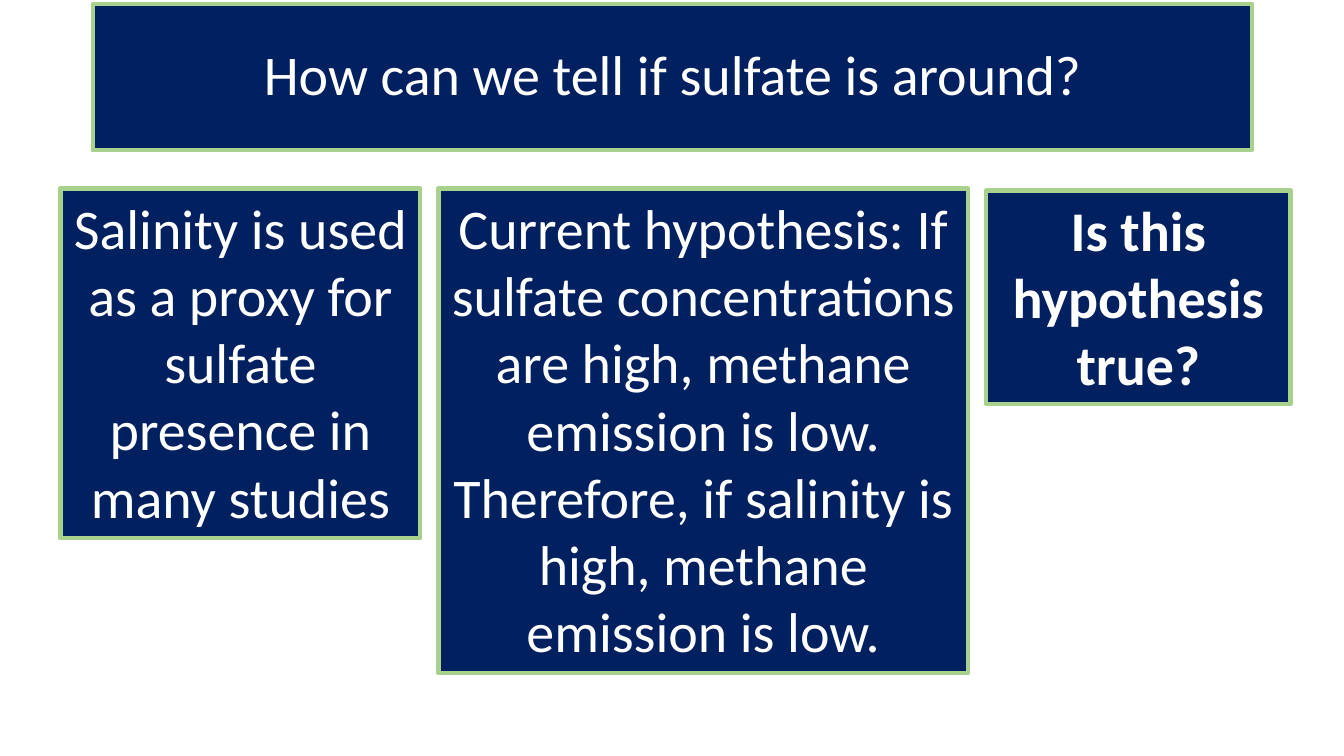
from pptx import Presentation
from pptx.dml.color import RGBColor
from pptx.enum.text import MSO_ANCHOR, MSO_AUTO_SIZE, PP_ALIGN
from pptx.util import Inches, Pt

COLORS = {"navy": "002060", "green": "A9D18E", "white": "FFFFFF"}


def color(name):
    return RGBColor.from_string(COLORS[name])


def write(frame, text, size=40, bold=False, space=1.0, anchor=MSO_ANCHOR.TOP):
    """Fill a frame with centred text, one paragraph per line."""
    frame.word_wrap = True
    frame.vertical_anchor = anchor
    frame.text = text
    for para in frame.paragraphs:
        para.alignment = PP_ALIGN.CENTER
        para.line_spacing = space
        font = para.font
        font.name = "Calibri"
        font.size = Pt(size)
        font.bold = bold
        font.color.rgb = color("white")


def paint(shape):
    """Give a shape the navy fill and green border."""
    shape.fill.solid()
    shape.fill.fore_color.rgb = color("navy")
    shape.line.color.rgb = color("green")
    shape.line.width = Pt(3)


def add_title(slide, text, left, top, width, height):
    title = slide.shapes.title
    title.left, title.top = Inches(left), Inches(top)
    title.width, title.height = Inches(width), Inches(height)
    paint(title)
    write(title.text_frame, text, space=0.9, anchor=MSO_ANCHOR.MIDDLE)
    title.text_frame.auto_size = MSO_AUTO_SIZE.NONE


def add_box(slide, text, left, top, width, height, **style):
    box = slide.shapes.add_textbox(
        Inches(left), Inches(top), Inches(width), Inches(height))
    paint(box)
    write(box.text_frame, text, **style)
    box.text_frame.auto_size = MSO_AUTO_SIZE.SHAPE_TO_FIT_TEXT


def main():
    deck = Presentation()
    deck.slide_width, deck.slide_height = Inches(13.33), Inches(7.5)
    slide = deck.slides.add_slide(deck.slide_layouts[5])

    # Question
    add_title(slide, "How can we tell if sulfate is around?",
              0.92, 0.04, 11.5, 1.45)

    # Line of reasoning, left to right
    add_box(slide,
            "Salinity is used as a proxy for sulfate presence in many studies",
            0.6, 1.87, 3.57, 3.47)
    add_box(slide,
            "Current hypothesis: If sulfate concentrations are high, "
            "methane emission is low.\n"
            "Therefore, if salinity is high, methane emission is low.",
            4.35, 1.87, 5.25, 4.81)
    add_box(slide, "Is this hypothesis true?",
            9.78, 1.89, 3.02, 2.12, bold=True)

    deck.save("out.pptx")


if __name__ == "__main__":
    main()
